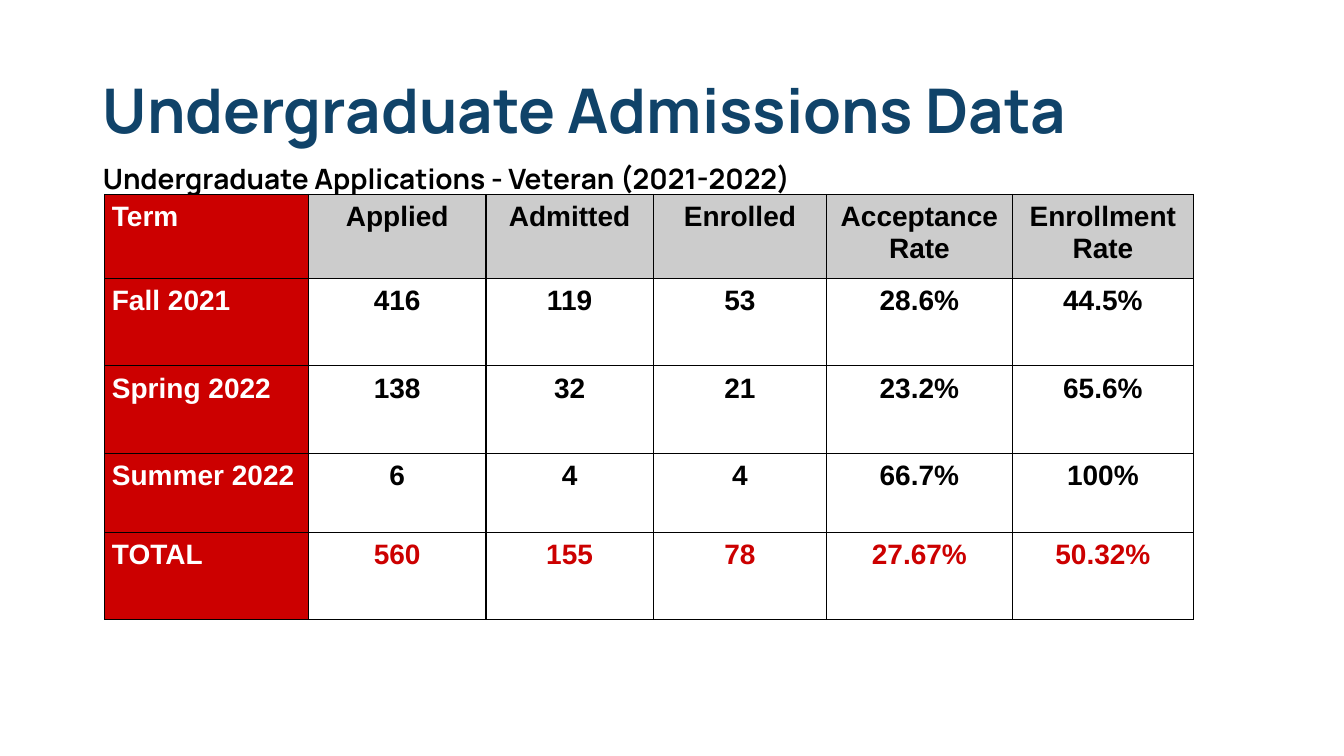
from lxml import etree
from pptx import Presentation
from pptx import util as u
from pptx.dml.color import RGBColor
from pptx.enum import text
from pptx.oxml import ns

PX = 9144
NAVY, RED, GREY, BLACK, WHITE = "104369", "CC0000", "CCCCCC", "000000", "FFFFFF"
COLUMN_WIDTHS = [202, 176, 166, 172, 184, 180]
ROW_HEIGHTS = [83, 87, 87, 78, 87]
ADMISSIONS = [
    ["Term", "Applied", "Admitted", "Enrolled", "Acceptance Rate", "Enrollment Rate"],
    ["Fall 2021", "416", "119", "53", "28.6%", "44.5%"],
    ["Spring 2022", "138", "32", "21", "23.2%", "65.6%"],
    ["Summer 2022", "6", "4", "4", "66.7%", "100%"],
    ["TOTAL", "560", "155", "78", "27.67%", "50.32%"],
]


def color(value):
    return RGBColor.from_string(value)


def assign(target, values):
    for name, value in values.items():
        setattr(target, name, value)


class AdmissionsSlide:
    """Hold the slide and its shared style, and add each kind of element."""

    heading_font = "Manrope"
    table_font = "Arial"
    table_size = 20
    cell_margin = 7

    def __init__(self, presentation):
        self.slide = presentation.slides.add_slide(presentation.slide_layouts[1])

    def fill_paragraph(self, paragraph, words, font, size, ink, **layout):
        paragraph.text = words
        assign(paragraph, layout)
        assign(paragraph.font, {"name": font, "size": u.Pt(size), "bold": True})
        paragraph.font.color.rgb = color(ink)

    def placeholder(self, index, box, words, size, ink, anchor, spacing, indent=0):
        shape = self.slide.placeholders[index]
        assign(shape, dict(zip(("left", "top", "width", "height"), (n * PX for n in box))))
        frame = shape.text_frame
        assign(frame, {"word_wrap": True, "auto_size": text.MSO_AUTO_SIZE.NONE,
                       "vertical_anchor": anchor})
        paragraph = frame.paragraphs[0]
        properties = paragraph._p.get_or_add_pPr()
        properties.set("marL", str(indent * PX))
        properties.set("indent", "0")
        etree.SubElement(properties, ns.qn("a:buNone"))
        self.fill_paragraph(paragraph, words, self.heading_font, size, ink,
                            alignment=text.PP_ALIGN.LEFT, line_spacing=spacing,
                            space_before=u.Pt(0))

    def border(self, cell):
        properties = cell._tc.get_or_add_tcPr()
        for side in ("lnL", "lnR", "lnT", "lnB"):
            line = etree.SubElement(properties, ns.qn("a:" + side), w=str(u.Pt(1)))
            fill = etree.SubElement(line, ns.qn("a:solidFill"))
            etree.SubElement(fill, ns.qn("a:srgbClr"), val=BLACK)

    def cell(self, cell, words, fill, ink, alignment):
        sides = ("margin_left", "margin_top", "margin_right", "margin_bottom")
        assign(cell, dict.fromkeys(sides, self.cell_margin * PX))
        self.border(cell)
        cell.fill.solid()
        cell.fill.fore_color.rgb = color(fill)
        self.fill_paragraph(cell.text_frame.paragraphs[0], words, self.table_font,
                            self.table_size, ink, alignment=alignment)

    def table(self, left, top, rows, widths, heights):
        shape = self.slide.shapes.add_table(len(rows), len(widths), left * PX, top * PX,
                                            sum(widths) * PX, sum(heights) * PX)
        table = shape.table
        assign(table, {"first_row": True, "horz_banding": False})
        for column, width in zip(table.columns, widths):
            column.width = width * PX
        for row, height in zip(table.rows, heights):
            row.height = height * PX
        for r, row in enumerate(rows):
            for c, words in enumerate(row):
                if c == 0:
                    style = RED, WHITE, text.PP_ALIGN.LEFT
                else:
                    fill = GREY if r == 0 else WHITE
                    ink = RED if r == len(rows) - 1 else BLACK
                    style = fill, ink, text.PP_ALIGN.CENTER
                self.cell(table.cell(r, c), words, *style)


def main():
    presentation = Presentation()
    assign(presentation, {"slide_width": 1333 * PX, "slide_height": 750 * PX})
    page = AdmissionsSlide(presentation)
    page.placeholder(0, (92, 40, 1150, 145), "Undergraduate Admissions Data",
                     44, NAVY, text.MSO_ANCHOR.MIDDLE, 0.9)
    page.placeholder(1, (62, 150, 1209, 545),
                     "Undergraduate Applications - Veteran (2021-2022)",
                     20, BLACK, text.MSO_ANCHOR.TOP, 1.15, indent=30)
    page.table(104, 193, ADMISSIONS, COLUMN_WIDTHS, ROW_HEIGHTS)
    presentation.save("out.pptx")


if __name__ == "__main__":
    main()
